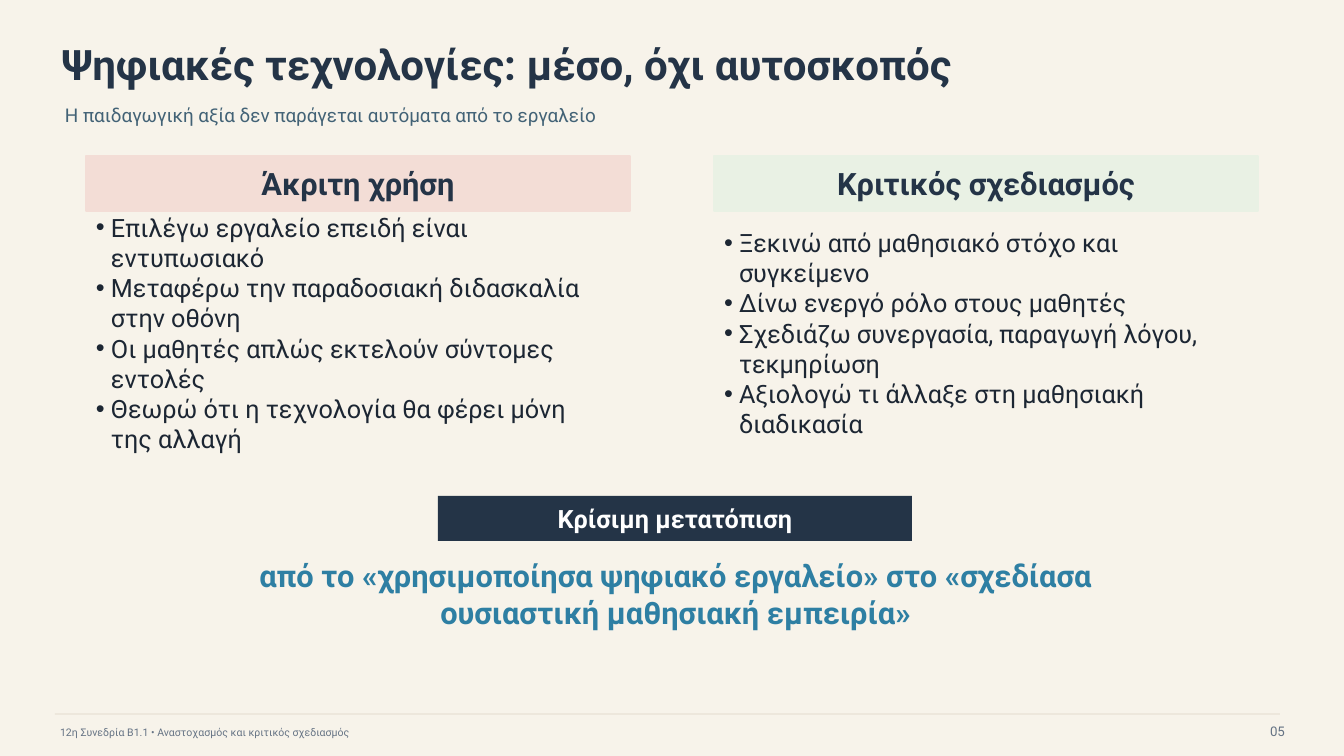
"""Build a slide contrasting uncritical use of digital tools with critical design."""
import lxml.etree
import pptx
import pptx.dml.color
import pptx.enum.shapes
import pptx.enum.text
import pptx.oxml.ns
import pptx.util

RGBColor = pptx.dml.color.RGBColor
CREAM = RGBColor(0xF7, 0xF3, 0xEA)
NAVY = RGBColor(0x24, 0x34, 0x47)
SLATE = RGBColor(0x42, 0x62, 0x76)
GREY = RGBColor(0x65, 0x73, 0x84)
INK = RGBColor(0x1C, 0x26, 0x33)
BLUE = RGBColor(0x2E, 0x7F, 0xA3)
SAND = RGBColor(0xD8, 0xD0, 0xC1)
ROSE = RGBColor(0xF3, 0xDD, 0xD6)
MINT = RGBColor(0xE9, 0xF1, 0xE4)
WHITE = RGBColor(0xFF, 0xFF, 0xFF)

LEFT = pptx.enum.text.PP_ALIGN.LEFT
CENTER = pptx.enum.text.PP_ALIGN.CENTER
RIGHT = pptx.enum.text.PP_ALIGN.RIGHT

TITLE = "Ψηφιακές τεχνολογίες: μέσο, όχι αυτοσκοπός"
SUBTITLE = "Η παιδαγωγική αξία δεν παράγεται αυτόματα από το εργαλείο"
COLUMNS = [
    ("Άκριτη χρήση", ROSE, [
        "Επιλέγω εργαλείο επειδή είναι εντυπωσιακό",
        "Μεταφέρω την παραδοσιακή διδασκαλία στην οθόνη",
        "Οι μαθητές απλώς εκτελούν σύντομες εντολές",
        "Θεωρώ ότι η τεχνολογία θα φέρει μόνη της αλλαγή",
    ]),
    ("Κριτικός σχεδιασμός", MINT, [
        "Ξεκινώ από μαθησιακό στόχο και συγκείμενο",
        "Δίνω ενεργό ρόλο στους μαθητές",
        "Σχεδιάζω συνεργασία, παραγωγή λόγου, τεκμηρίωση",
        "Αξιολογώ τι άλλαξε στη μαθησιακή διαδικασία",
    ]),
]
SHIFT_LABEL = "Κρίσιμη μετατόπιση"
SHIFT_MESSAGE = ("από το «χρησιμοποίησα ψηφιακό εργαλείο» στο "
                 "«σχεδίασα ουσιαστική μαθησιακή εμπειρία»")
FOOTER = "12η Συνεδρία Β1.1 • Αναστοχασμός και κριτικός σχεδιασμός"
PAGE_NUMBER = "05"

PX = 914400 / 100.8
COLUMN_LEFT, COLUMN_STEP = 86, 628
BULLET_INDENT = 15


def px(length):
    """Turn pixels into EMU."""
    return round(length * PX)


def place(box, left, top, width, height):
    """Move and size a box given in pixels."""
    box.left, box.top, box.width, box.height = map(px, (left, top, width, height))
    return box


def add_bullet(para):
    """Give a paragraph a hanging round bullet."""
    properties = para._p.get_or_add_pPr()
    properties.set("marL", str(px(BULLET_INDENT)))
    properties.set("indent", str(-px(BULLET_INDENT)))
    bullet = lxml.etree.SubElement(properties, pptx.oxml.ns.qn("a:buChar"))
    bullet.set("char", "•")


def write(box, *lines, size, color, bold=False, align=LEFT, bullets=False):
    """Fill a box with formatted paragraphs."""
    frame = box.text_frame
    frame.word_wrap = True
    frame.auto_size = pptx.enum.text.MSO_AUTO_SIZE.NONE
    frame.vertical_anchor = pptx.enum.text.MSO_ANCHOR.MIDDLE
    frame.margin_left = frame.margin_right = frame.margin_top = frame.margin_bottom = 0
    for index, line in enumerate(lines):
        para = frame.add_paragraph() if index else frame.paragraphs[0]
        if bullets:
            add_bullet(para)
        para.alignment = align
        para.space_before = para.space_after = pptx.util.Pt(0)
        para.line_spacing = 1.0
        span = para.add_run()
        span.text = line
        span.font.name = "Roboto"
        span.font.size = pptx.util.Pt(size)
        span.font.bold = bold
        span.font.color.rgb = color


def add_text(page, area, text, **style):
    """Add a text box over a pixel area."""
    write(page.shapes.add_textbox(*map(px, area)), text, **style)


def add_band(page, area, text, fill, **style):
    """Add a filled rectangle with a centred bold label."""
    band = page.shapes.add_shape(pptx.enum.shapes.MSO_SHAPE.RECTANGLE, *map(px, area))
    band.shadow.inherit = False
    band.fill.solid()
    band.fill.fore_color.rgb = fill
    band.line.color.rgb = fill
    band.line.width = pptx.util.Pt(1)
    write(band, text, bold=True, align=CENTER, **style)
    return band


def add_rule(page, left, right, top):
    """Add the thin translucent line above the footer."""
    rule = page.shapes.add_connector(
        pptx.enum.shapes.MSO_CONNECTOR.STRAIGHT, px(left), px(top), px(right), px(top))
    rule.line.color.rgb = SAND
    rule.line.width = pptx.util.Pt(0.5)
    shade = rule.line._ln.find(".//" + pptx.oxml.ns.qn("a:srgbClr"))
    lxml.etree.SubElement(shade, pptx.oxml.ns.qn("a:alpha")).set("val", "90000")
    lxml.etree.SubElement(rule._element.spPr, pptx.oxml.ns.qn("a:effectLst"))


def main():
    """Create and save the deck."""
    deck = pptx.Presentation()
    deck.slide_width, deck.slide_height = px(1344), px(756)
    page = deck.slides.add_slide(deck.slide_layouts.get_by_name("Two Content"))
    page.background.fill.solid()
    page.background.fill.fore_color.rgb = CREAM

    title, *bodies = page.placeholders
    write(place(title, 62, 36, 998, 55), TITLE, size=30, color=NAVY, bold=True)
    add_text(page, (65, 97, 1028, 36), SUBTITLE, size=13.5, color=SLATE)

    for index, (body, (heading, fill, points)) in enumerate(zip(bodies, COLUMNS)):
        left = COLUMN_LEFT + index * COLUMN_STEP
        add_band(page, (left, 156, 544, 55), heading, fill, size=22, color=NAVY)
        place(body, left + 10, 227, 514, 212)
        write(body, *points, size=18, color=INK, bullets=True)

    badge = add_band(page, (438, 496, 474, 45), SHIFT_LABEL, NAVY, size=18, color=WHITE)
    badge.line.fill.background()
    add_text(page, (212, 566, 927, 56), SHIFT_MESSAGE,
             size=22, color=BLUE, bold=True, align=CENTER)

    add_rule(page, 55, 1280, 714)
    add_text(page, (60, 723, 877, 18), FOOTER, size=7.5, color=GREY)
    add_text(page, (1225, 717, 60, 28), PAGE_NUMBER, size=9.5, color=GREY, align=RIGHT)
    deck.save("out.pptx")


if __name__ == "__main__":
    main()
